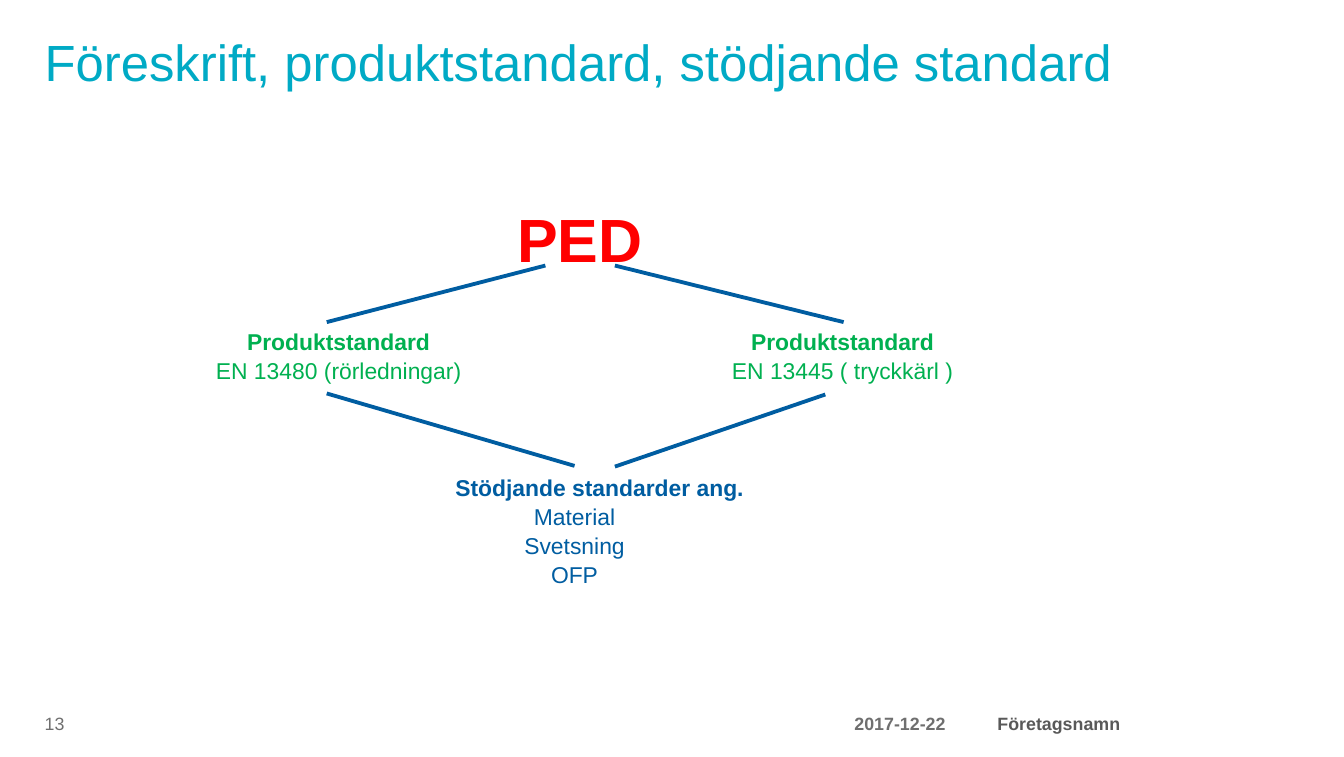
from dataclasses import dataclass

from lxml.etree import SubElement
from pptx import Presentation
from pptx.dml.color import RGBColor
from pptx.enum.shapes import MSO_CONNECTOR
from pptx.enum.text import MSO_ANCHOR, MSO_AUTO_SIZE, PP_ALIGN
from pptx.oxml.ns import qn
from pptx.util import Cm, Pt


@dataclass(frozen=True)
class Theme:
    face: str = "Arial"
    teal: str = "00AAC5"
    blue: str = "005DA1"
    red: str = "FF0000"
    green: str = "00B050"
    grey: str = "6F6F6F"
    dark: str = "595959"
    head: int = 40
    big: int = 48
    text: int = 18
    small: int = 14
    step: int = 23
    rule: int = 3


def apply(item, values):
    for name, value in values.items():
        setattr(item, name, value)


class Page:
    def __init__(self, deck, theme):
        self.theme = theme
        self.slide = deck.slides.add_slide(deck.slide_layouts[1])

    def fill(self, shape, area, lines, size, color, anchor=MSO_ANCHOR.TOP,
             align=PP_ALIGN.CENTER, step=None):
        """Place a shape and write its lines, given as (text, bold, left margin)."""
        sides = ("left", "top", "width", "height")
        apply(shape, dict(zip(sides, map(Cm, area))))
        frame = shape.text_frame
        apply(frame, {
            "word_wrap": True, "auto_size": MSO_AUTO_SIZE.NONE,
            "vertical_anchor": anchor, "margin_left": 0, "margin_top": 0,
            "margin_right": 0, "margin_bottom": 0,
        })
        for index, (text, bold, margin) in enumerate(lines):
            para = frame.add_paragraph() if index else frame.paragraphs[0]
            props = para._p.get_or_add_pPr()
            props.set("marL", str(int(Cm(margin))))
            props.set("indent", "0")
            SubElement(props, qn("a:buNone"))
            apply(para, {"alignment": align, "space_before": Pt(0)})
            if step:
                para.line_spacing = Pt(step)
            run = para.add_run()
            run.text = text
            apply(run.font, {"name": self.theme.face, "size": Pt(size), "bold": bold})
            run.font.color.rgb = RGBColor.from_string(color)

    def title(self, text):
        look = self.theme
        self.fill(self.slide.shapes.title, (1.24, 0.76, 32.18, 1.78),
                  [(text, False, 0)], look.head, look.teal,
                  MSO_ANCHOR.BOTTOM, PP_ALIGN.LEFT, 50.7)

    def body(self, area, lines, color):
        self.fill(self.slide.placeholders[1], area, lines,
                  self.theme.text, color, step=self.theme.step)

    def label(self, area, lines, size, color, **style):
        box = self.slide.shapes.add_textbox(0, 0, 0, 0)
        self.fill(box, area, lines, size, color, **style)

    def line(self, start, end):
        ends = map(Cm, start + end)
        link = self.slide.shapes.add_connector(MSO_CONNECTOR.STRAIGHT, *ends)
        link.line.color.rgb = RGBColor.from_string(self.theme.blue)
        link.line.width = Pt(self.theme.rule)
        SubElement(link._element.spPr, qn("a:effectLst"))


def main():
    deck = Presentation()
    apply(deck, {"slide_width": Cm(37.31), "slide_height": Cm(21.01)})
    look = Theme()
    page = Page(deck, look)

    page.title("Föreskrift, produktstandard, stödjande standard")
    page.label((13.1, 5.58, 6, 1.9), [("PED", True, 0)], look.big, look.red)

    for center, norm in ((9.4, "EN 13480 (rörledningar)"),
                         (23.39, "EN 13445 ( tryckkärl )")):
        page.label((center - 4.5, 9.04, 9, 1.7),
                   [("Produktstandard", True, 0), (norm, False, 0)],
                   look.text, look.green, step=look.step)

    topics = [(name, False, 0) for name in ("Material", "Svetsning", "OFP")]
    page.body((9.95, 13.09, 12, 3.4),
              [("Stödjande standarder ang.", True, 1.39)] + topics, look.blue)

    for start, end in (((9.07, 8.94), (15.14, 7.37)),
                       ((17.07, 7.37), (23.42, 8.94)),
                       ((17.07, 12.95), (22.91, 10.95)),
                       ((9.07, 10.92), (15.95, 12.93))):
        page.line(start, end)

    for left, top, width, text, bold, color in (
            (1.24, 19.51, 1, "13", False, look.grey),
            (23.72, 19.51, 3.18, "2017-12-22", True, look.grey),
            (27.69, 19.53, 3.9, "Företagsnamn", True, look.dark)):
        page.label((left, top, width, 1.12), [(text, bold, 0)], look.small, color,
                   anchor=MSO_ANCHOR.MIDDLE, align=PP_ALIGN.LEFT)

    deck.save("out.pptx")


if __name__ == "__main__":
    main()
